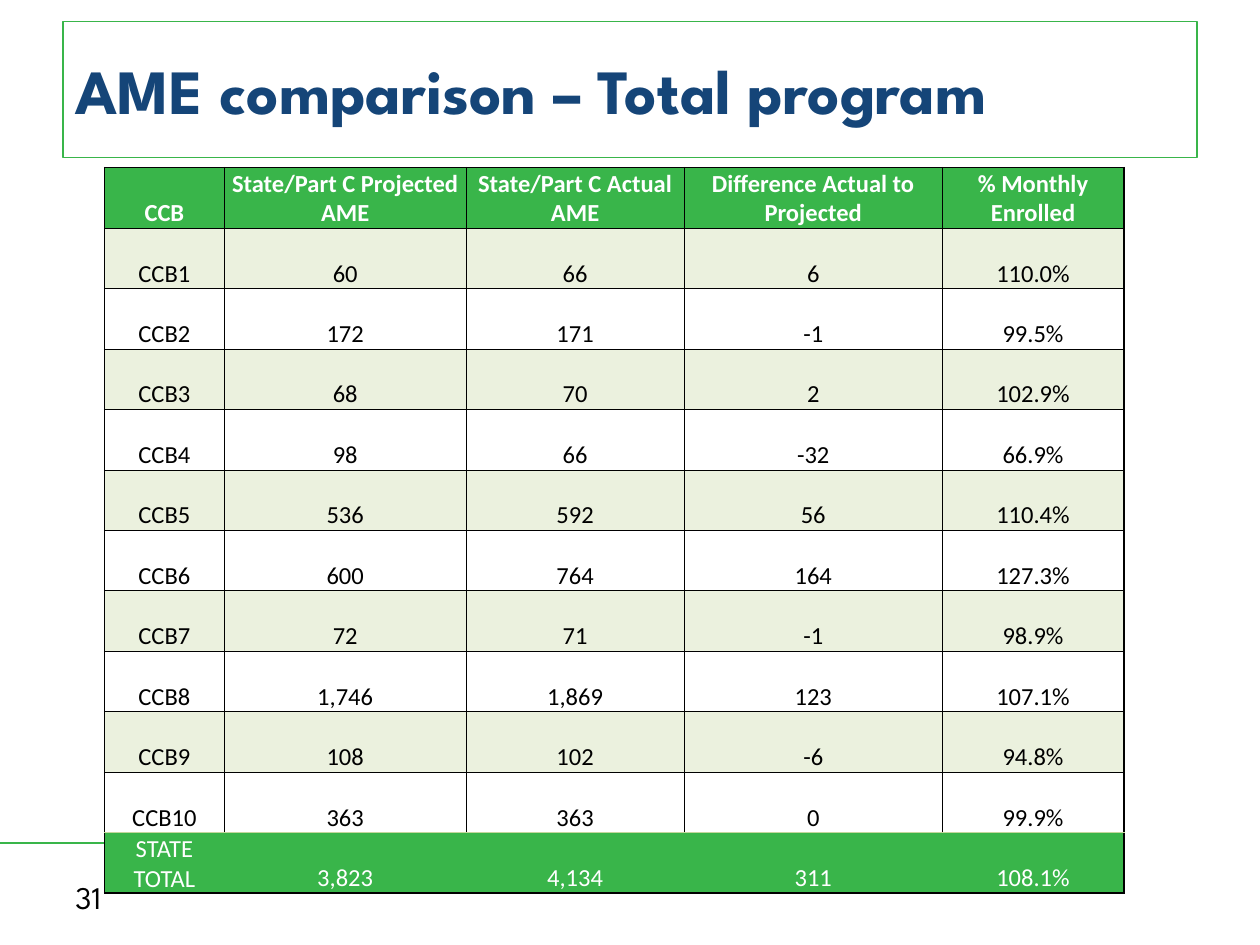
"""Build the average monthly enrollment comparison slide."""

from dataclasses import dataclass
from typing import Optional

from lxml.etree import SubElement
from pptx import Presentation
from pptx.dml.color import RGBColor
from pptx.enum.shapes import MSO_CONNECTOR
from pptx.enum.text import MSO_ANCHOR, MSO_AUTO_SIZE, PP_ALIGN
from pptx.oxml.ns import qn
from pptx.slide import Slide
from pptx.table import _Cell
from pptx.util import Inches, Pt

GREEN = RGBColor(0x39, 0xB5, 0x4A)
PALE_GREEN = RGBColor(0xEB, 0xF1, 0xDE)
RULE_GREEN = RGBColor(0xC4, 0xD7, 0x9B)
NAVY = RGBColor(0x15, 0x45, 0x78)
BLACK = RGBColor(0, 0, 0)
WHITE = RGBColor(0xFF, 0xFF, 0xFF)
HEADING_FONT = "League Spartan"
TABLE_FONT = "Calibri"

COLUMN_WIDTHS = (0.95, 1.92, 1.73, 2.05, 1.44)
ROW_HEIGHT = 0.48
ROWS = (
    ("CCB", "State/Part C Projected AME", "State/Part C Actual AME",
     "Difference Actual to Projected", "% Monthly Enrolled"),
    ("CCB1", "60", "66", "6", "110.0%"),
    ("CCB2", "172", "171", "-1", "99.5%"),
    ("CCB3", "68", "70", "2", "102.9%"),
    ("CCB4", "98", "66", "-32", "66.9%"),
    ("CCB5", "536", "592", "56", "110.4%"),
    ("CCB6", "600", "764", "164", "127.3%"),
    ("CCB7", "72", "71", "-1", "98.9%"),
    ("CCB8", "1,746", "1,869", "123", "107.1%"),
    ("CCB9", "108", "102", "-6", "94.8%"),
    ("CCB10", "363", "363", "0", "99.9%"),
    ("STATE TOTAL", "3,823", "4,134", "311", "108.1%"),
)
LAST_ROW = len(ROWS) - 1
LAST_COLUMN = len(COLUMN_WIDTHS) - 1


@dataclass(frozen=True)
class Border:
    width: float
    color: RGBColor = BLACK


@dataclass(frozen=True)
class RowStyle:
    fill: Optional[RGBColor]
    color: RGBColor
    bold: bool = False


THIN = Border(0.5)
THICK = Border(1)
TOTAL_RULE = Border(0.5, RULE_GREEN)


def row_style(row: int) -> RowStyle:
    if row in (0, LAST_ROW):
        return RowStyle(GREEN, WHITE, bold=row == 0)
    return RowStyle(PALE_GREEN if row % 2 else None, BLACK)


def cell_borders(row: int, column: int) -> dict[str, Optional[Border]]:
    inner = None if row == LAST_ROW else THIN
    return {
        "lnL": THICK if column == 0 else inner,
        "lnR": THICK if column == LAST_COLUMN else inner,
        "lnT": THICK if row == 0 else TOTAL_RULE if row == LAST_ROW else THIN,
        "lnB": THICK if row == LAST_ROW else TOTAL_RULE if row == LAST_ROW - 1 else THIN,
    }


def draw_borders(cell: _Cell, borders: dict[str, Optional[Border]]) -> None:
    properties = cell._tc.get_or_add_tcPr()
    for side, border in borders.items():
        line = SubElement(properties, qn(f"a:{side}"))
        if border is None:
            SubElement(line, qn("a:noFill"))
            continue
        line.set("w", str(Pt(border.width)))
        fill = SubElement(line, qn("a:solidFill"))
        SubElement(fill, qn("a:srgbClr")).set("val", str(border.color))


def draw_cell(cell: _Cell, text: str, row: int, column: int) -> None:
    style = row_style(row)
    draw_borders(cell, cell_borders(row, column))
    if style.fill is None:
        cell.fill.background()
    else:
        cell.fill.solid()
        cell.fill.fore_color.rgb = style.fill
    cell.margin_left = cell.margin_right = cell.margin_top = Inches(0.01)
    cell.margin_bottom = 0
    cell.vertical_anchor = MSO_ANCHOR.BOTTOM
    cell.text = text
    paragraph = cell.text_frame.paragraphs[0]
    paragraph.alignment = PP_ALIGN.CENTER
    paragraph.font.name = TABLE_FONT
    paragraph.font.size = Pt(14)
    paragraph.font.bold = style.bold
    paragraph.font.color.rgb = style.color


def draw_table(page: Slide) -> None:
    frame = page.shapes.add_table(
        len(ROWS), len(COLUMN_WIDTHS), Inches(0.83), Inches(1.33),
        Inches(sum(COLUMN_WIDTHS)), Inches(ROW_HEIGHT * len(ROWS)))
    table = frame.table
    for column, width in zip(table.columns, COLUMN_WIDTHS):
        column.width = Inches(width)
    for row, texts in enumerate(ROWS):
        table.rows[row].height = Inches(ROW_HEIGHT)
        for column, text in enumerate(texts):
            draw_cell(table.cell(row, column), text, row, column)


def draw_title(page: Slide) -> None:
    title = page.shapes.title
    title.left, title.top = Inches(0.5), Inches(0.17)
    title.width, title.height = Inches(9), Inches(1.08)
    title.line.color.rgb = GREEN
    title.line.width = Pt(1)
    frame = title.text_frame
    frame.text = "AME comparison – Total program"
    frame.auto_size = MSO_AUTO_SIZE.NONE
    frame.vertical_anchor = MSO_ANCHOR.MIDDLE
    paragraph = frame.paragraphs[0]
    paragraph.alignment = PP_ALIGN.LEFT
    paragraph.font.name = HEADING_FONT
    paragraph.font.size = Pt(36)
    paragraph.font.bold = True
    paragraph.font.color.rgb = NAVY


def draw_footer(page: Slide) -> None:
    rule = page.shapes.add_connector(
        MSO_CONNECTOR.STRAIGHT, 0, Inches(6.69), Inches(8.17), Inches(6.69))
    rule.line.color.rgb = GREEN
    rule.line.width = Pt(1.5)
    SubElement(rule._element.spPr, qn("a:effectLst"))
    box = page.shapes.add_textbox(Inches(0.5), Inches(6.92), Inches(2.33), Inches(0.4))
    frame = box.text_frame
    frame.word_wrap = True
    frame.vertical_anchor = MSO_ANCHOR.MIDDLE
    frame.text = "31"
    paragraph = frame.paragraphs[0]
    paragraph.font.name = HEADING_FONT
    paragraph.font.size = Pt(18)
    paragraph.font.color.rgb = BLACK


def main() -> None:
    deck = Presentation()
    deck.slide_width, deck.slide_height = Inches(10), Inches(7.5)
    page = deck.slides.add_slide(deck.slide_layouts.get_by_name("Title Only"))
    draw_footer(page)
    draw_title(page)
    draw_table(page)
    deck.save("out.pptx")


if __name__ == "__main__":
    main()
